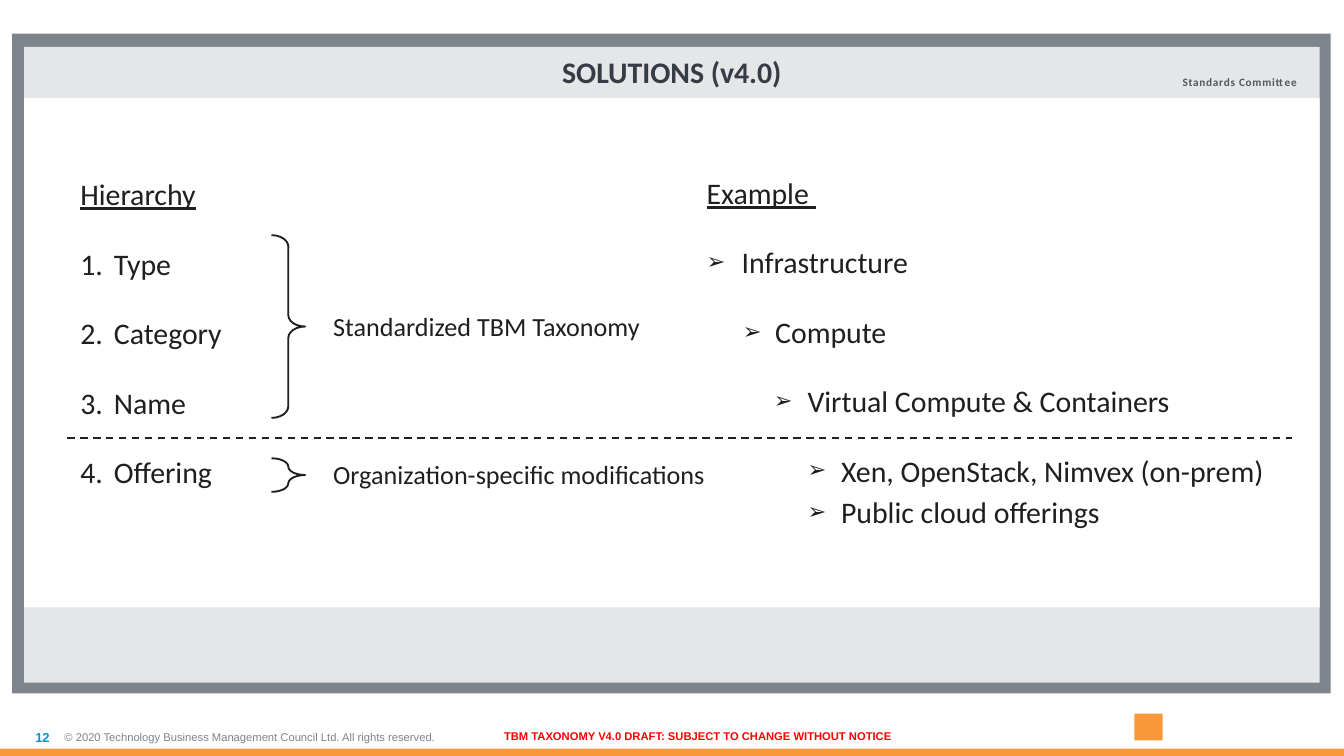
"""Build the SOLUTIONS (v4.0) slide with its hierarchy, braces and example."""
from typing import NamedTuple, Optional

from lxml.etree import SubElement
from pptx import Presentation
from pptx.dml.color import RGBColor
from pptx.enum.dml import MSO_LINE
from pptx.enum.shapes import MSO_CONNECTOR, MSO_SHAPE
from pptx.enum.text import MSO_ANCHOR as ANCHOR, PP_ALIGN as ALIGN
from pptx.oxml.ns import qn
from pptx.util import Inches, Pt

INK, GREY, PALE, WHITE, ORANGE = "1E1F21", "7E848B", "E5E6E8", "FFFFFF", "F89838"


class Box(NamedTuple):
    left: float
    top: float
    width: float
    height: float


class Item(NamedTuple):
    text: str
    bullet: str = ""
    level: int = 0
    indent: float = 0
    hang: float = 0.25
    before: float = 18
    underline: bool = False


class Brace(NamedTuple):
    top: float
    height: float
    label: str
    label_top: float
    label_width: float


HIERARCHY = [Item("Hierarchy", underline=True)] + [
    Item(name, "number", indent=0.25) for name in ("Type", "Category", "Name", "Offering")
]
EXAMPLE = [
    Item("Example ", underline=True),
    Item("Infrastructure", "➢", 0, 0.26, 0.26),
    Item("Compute", "➢", 1, 0.51, 0.24),
    Item("Virtual Compute & Containers", "➢", 2, 0.75),
    Item("Xen, OpenStack, Nimvex (on-prem)", "➢", 3, 1),
    Item("Public cloud offerings", "➢", 3, 1, before=3),
]
BRACES = [
    Brace(1.75, 1.36, "Standardized TBM Taxonomy", 2.26, 2.79),
    Brace(3.41, 0.25, "Organization-specific modifications", 3.36, 3.08),
]


def rgb(value: str) -> RGBColor:
    return RGBColor.from_string(value)


def add_bar(s, box: Box, color: str):
    sp = s.shapes.add_shape(MSO_SHAPE.RECTANGLE, *map(Inches, box))
    sp.shadow.inherit = False
    sp.fill.solid()
    sp.fill.fore_color.rgb = rgb(color)
    sp.line.fill.background()
    return sp


def add_bullet(p, item: Item) -> None:
    pPr = p._p.get_or_add_pPr()
    pPr.set("marL", str(Inches(item.indent)))
    pPr.set("indent", str(-Inches(item.hang)))
    if item.bullet == "number":
        SubElement(pPr, qn("a:buFont"), typeface="+mj-lt")
        SubElement(pPr, qn("a:buAutoNum"), type="arabicPeriod")
    else:
        SubElement(pPr, qn("a:buSzPct"), val="75000")
        SubElement(pPr, qn("a:buFont"), typeface="Arial")
        SubElement(pPr, qn("a:buChar"), char=item.bullet)


def add_run(p, text: str, *, size: float, font: str = "Calibri", color: str = INK,
            bold: bool = False, underline: bool = False, spacing: int = 0) -> None:
    r = p.add_run()
    r.text = text
    r.font.size, r.font.name = Pt(size), font
    r.font.bold, r.font.underline = bold, underline
    r.font.color.rgb = rgb(color)
    if spacing:
        r._r.get_or_add_rPr().set("spc", str(spacing))


def add_text(s, box: Box, text: str, *, align: Optional[ALIGN] = None,
             anchor: ANCHOR = ANCHOR.TOP, inset: bool = True, wrap: bool = True, **fmt) -> None:
    tf = s.shapes.add_textbox(*map(Inches, box)).text_frame
    tf.word_wrap, tf.vertical_anchor = wrap, anchor
    if not inset:
        tf.margin_left = tf.margin_right = tf.margin_top = tf.margin_bottom = 0
    p = tf.paragraphs[0]
    p.alignment = align
    add_run(p, text, **fmt)


def add_list(s, box: Box, items: list[Item]) -> None:
    tf = s.shapes.add_textbox(*map(Inches, box)).text_frame
    tf.word_wrap = True
    for i, item in enumerate(items):
        p = tf.add_paragraph() if i else tf.paragraphs[0]
        p.level = item.level
        if item.bullet:
            add_bullet(p, item)
        if i:
            p.space_before = Pt(item.before)
        add_run(p, item.text, size=16, underline=item.underline)


def add_brace(s, brace: Brace) -> None:
    box = Box(2.02, brace.top, 0.25, brace.height)
    sp = s.shapes.add_shape(MSO_SHAPE.RIGHT_BRACE, *map(Inches, box))
    sp.shadow.inherit = False
    sp.fill.background()
    sp.line.color.rgb = rgb(INK)
    sp.line.width = Pt(1)
    sp.adjustments[0], sp.adjustments[1] = 0.34, 0.5
    add_text(s, Box(2.38, brace.label_top, brace.label_width, 0.34), brace.label, size=14)


def add_divider(s, left: float, right: float, y: float) -> None:
    line = s.shapes.add_connector(MSO_CONNECTOR.STRAIGHT, *map(Inches, (left, y, right, y)))
    line.line.color.rgb = rgb(INK)
    line.line.width = Pt(1)
    line.line.dash_style = MSO_LINE.DASH
    SubElement(line._element.spPr, qn("a:effectLst"))


def add_footer(s) -> None:
    small = dict(font="Arial", anchor=ANCHOR.MIDDLE, inset=False)
    add_text(s, Box(0.48, 5.34, 3.36, 0.29),
             "© 2020 Technology Business Management Council Ltd. All rights reserved.",
             size=6, color=GREY, **small)
    add_text(s, Box(0, 5.34, 0.37, 0.29), "12", size=7, color="0D96C9", bold=True,
             align=ALIGN.RIGHT, **small)
    add_bar(s, Box(8.44, 5.31, 0.21, 0.2), ORANGE)
    add_bar(s, Box(0, 5.57, 10, 0.06), ORANGE)
    add_text(s, Box(3.73, 5.43, 2.92, 0.1),
             "TBM TAXONOMY V4.0 DRAFT: SUBJECT TO CHANGE WITHOUT NOTICE",
             size=6, color="FF0000", bold=True, align=ALIGN.CENTER, wrap=False, **small)


def add_frame(s) -> None:
    add_bar(s, Box(0.09, 0.25, 9.81, 4.91), GREY)
    tf = add_bar(s, Box(0.18, 0.35, 9.64, 4.73), PALE).text_frame
    tf.vertical_anchor = ANCHOR.TOP
    p = tf.paragraphs[0]
    p.alignment = ALIGN.CENTER
    add_run(p, "SOLUTIONS (v4.0)", size=16, color="353C45", bold=True)
    add_bar(s, Box(0.18, 0.73, 9.64, 3.79), WHITE)
    add_text(s, Box(8.8, 0.56, 0.87, 0.1), "Standards Committee", size=6, color="53565C",
             bold=True, spacing=40, inset=False, wrap=False)


def main() -> None:
    prs = Presentation()
    prs.slide_width, prs.slide_height = Inches(10), Inches(10 * 9 / 16)
    s = prs.slides.add_slide(prs.slide_layouts[6])
    add_footer(s)
    add_frame(s)
    add_list(s, Box(0.5, 1.26, 2.33, 3.02), HIERARCHY)
    for brace in BRACES:
        add_brace(s, brace)
    add_list(s, Box(5.16, 1.25, 4.51, 2.77), EXAMPLE)
    add_divider(s, 0.5, 9.61, 3.26)
    prs.save("out.pptx")


if __name__ == "__main__":
    main()
